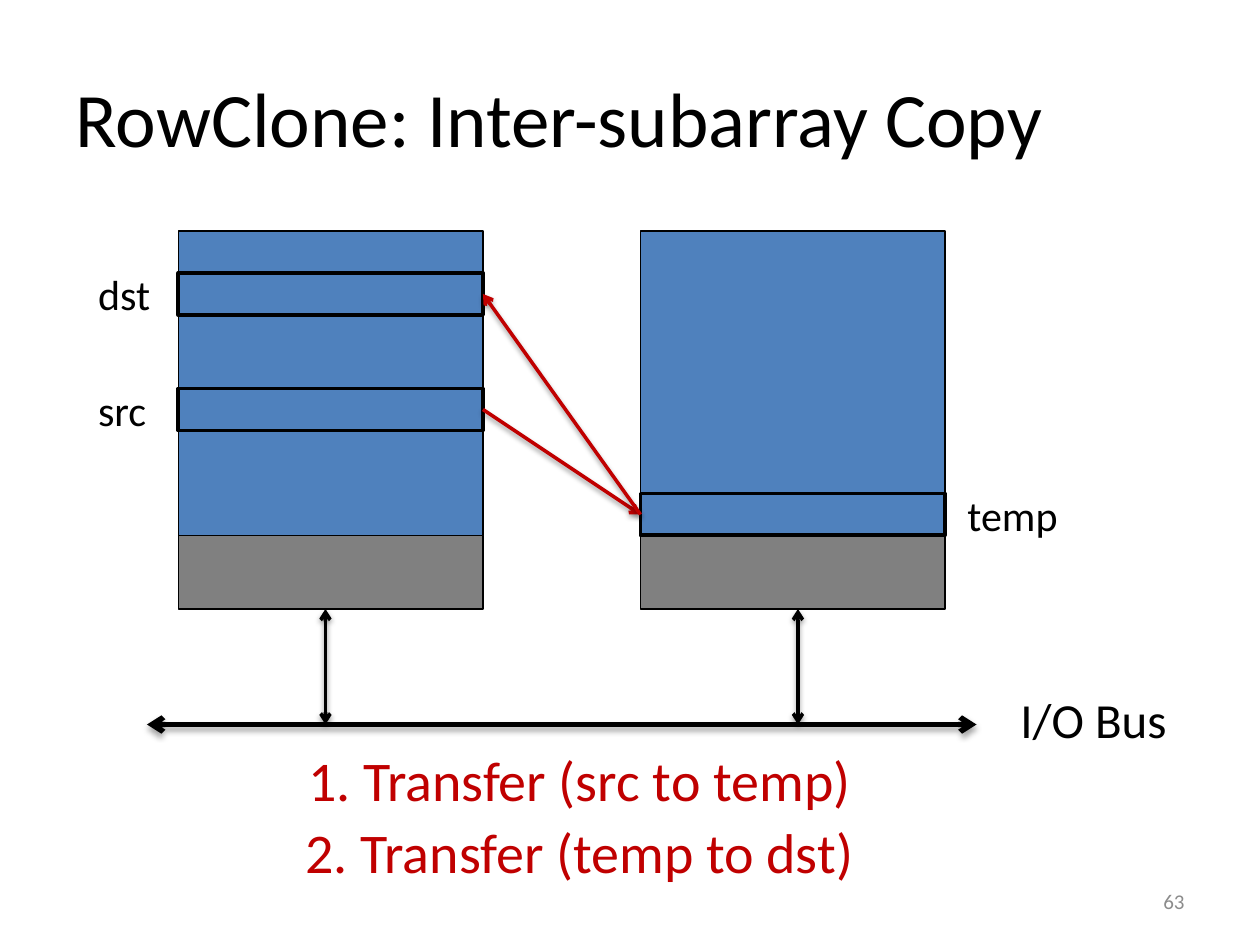
from lxml import etree
from pptx import Presentation
from pptx import util as u
from pptx.dml.color import RGBColor
from pptx.enum import shapes, text
from pptx.oxml import parse_xml
from pptx.oxml.ns import nsdecls, qn

BLACK = RGBColor(0x00, 0x00, 0x00)
BLUE = RGBColor(0x4F, 0x81, 0xBD)
GRAY = RGBColor(0x80, 0x80, 0x80)
RED = RGBColor(0xC0, 0x00, 0x00)
NUMBER_GRAY = RGBColor(0x8C, 0x8C, 0x8C)
FONT = "Calibri"

# Diagram grid: twelve units to the inch
SUBARRAY_WIDTH, SUBARRAY_TOP = 29, 22
CELLS_HEIGHT, BUFFER_HEIGHT, ROW_HEIGHT = 29, 7, 4
BUFFER_TOP = SUBARRAY_TOP + CELLS_HEIGHT
SUBARRAY_BOTTOM = BUFFER_TOP + BUFFER_HEIGHT
LEFT_X, RIGHT_X = 17, 61
DST_Y, SRC_Y, TEMP_Y = 26, 37, 47
BUS_Y = 69


def grid(units):
    return u.Inches(units / 12)


def style_text(paragraph, size, color, align=text.PP_ALIGN.LEFT):
    paragraph.alignment = align
    paragraph.font.name = FONT
    paragraph.font.size = u.Pt(size)
    paragraph.font.color.rgb = color


def add_box(slide, x, y, height, fill, line_width):
    box = slide.shapes.add_shape(shapes.MSO_SHAPE.RECTANGLE, grid(x), grid(y),
                                 grid(SUBARRAY_WIDTH), grid(height))
    box.shadow.inherit = False
    box.fill.solid()
    box.fill.fore_color.rgb = fill
    box.line.color.rgb = BLACK
    box.line.width = u.Pt(line_width)
    return box


def add_subarray(slide, x):
    add_box(slide, x, SUBARRAY_TOP, CELLS_HEIGHT, BLUE, 0.75)
    add_box(slide, x, BUFFER_TOP, BUFFER_HEIGHT, GRAY, 0.75)


def add_row(slide, x, y):
    return add_box(slide, x, y, ROW_HEIGHT, BLUE, 2.25)


def add_arrow(slide, start, end, color, width, both_ends=False,
              shadow_distance=1.6, shadow_alpha=38):
    arrow = slide.shapes.add_connector(shapes.MSO_CONNECTOR.STRAIGHT,
                                       *map(grid, start + end))
    arrow.line.color.rgb = color
    arrow.line.width = u.Pt(width)
    line = arrow.line._get_or_add_ln()
    for tag in ("a:headEnd", "a:tailEnd") if both_ends else ("a:tailEnd",):
        etree.SubElement(line, qn(tag), type="arrow")
    # Soft shadow straight below the line
    arrow._element.spPr.append(parse_xml(
        f'<a:effectLst {nsdecls("a")}>'
        f'<a:outerShdw blurRad="{u.Pt(3.1)}" dist="{u.Pt(shadow_distance)}" '
        f'dir="5400000" rotWithShape="0"><a:srgbClr val="000000">'
        f'<a:alpha val="{shadow_alpha * 1000}"/></a:srgbClr></a:outerShdw>'
        f'</a:effectLst>'))
    return arrow


def add_transfer(slide, source, source_side, target, target_side):
    arrow = add_arrow(slide, (0, 0), (1, 1), RED, 2)
    arrow.begin_connect(source, source_side)
    arrow.end_connect(target, target_side)


def add_label(slide, words, box, size, color=BLACK, align=text.PP_ALIGN.LEFT):
    label = slide.shapes.add_textbox(*map(u.Inches, box))
    frame = label.text_frame
    frame.word_wrap = False
    frame.text = words
    style_text(frame.paragraphs[0], size, color, align)
    return frame


def main():
    prs = Presentation()
    prs.slide_width, prs.slide_height = u.Inches(10), u.Inches(7.5)
    slide = prs.slides.add_slide(prs.slide_layouts[5])

    # Title
    title = slide.shapes.title
    title.text = "RowClone: Inter-subarray Copy"
    style_text(title.text_frame.paragraphs[0], 44, BLACK)

    # Subarrays with their row buffers
    for x in (LEFT_X, RIGHT_X):
        add_subarray(slide, x)

    # I/O bus and its links
    add_arrow(slide, (14, BUS_Y), (93, BUS_Y), BLACK, 3, both_ends=True,
              shadow_distance=1.8, shadow_alpha=35)
    add_label(slide, "I/O Bus", (8, 5.42, 1.38, 0.57), 28)
    for x in (76, 31):
        add_arrow(slide, (x, SUBARRAY_BOTTOM), (x, BUS_Y), BLACK, 2,
                  both_ends=True)

    # Rows taking part in the copy
    src = add_row(slide, LEFT_X, SRC_Y)
    dst = add_row(slide, LEFT_X, DST_Y)
    temp = add_row(slide, RIGHT_X, TEMP_Y)
    for name, x, row_y, width in (("src", 0.68, SRC_Y, 0.65),
                                  ("dst", 0.68, DST_Y, 0.65),
                                  ("temp", 7.58, TEMP_Y, 0.92)):
        add_label(slide, name, (x, (row_y - 1) / 12, width, 0.5), 24)

    # Transfers and their steps
    add_transfer(slide, src, 3, temp, 1)
    add_transfer(slide, temp, 1, dst, 3)
    for step, y in (("1. Transfer (src to temp)", 5.87),
                    ("2. Transfer (temp to dst)", 6.44)):
        add_label(slide, step, (2.31, y, 4.58, 0.64), 32, RED,
                  text.PP_ALIGN.CENTER)

    # Slide number
    number = add_label(slide, "63", (7.17, 6.95, 2.33, 0.4), 12, NUMBER_GRAY,
                       text.PP_ALIGN.RIGHT)
    number.word_wrap = True
    number.vertical_anchor = text.MSO_ANCHOR.MIDDLE

    prs.save("out.pptx")


if __name__ == "__main__":
    main()
